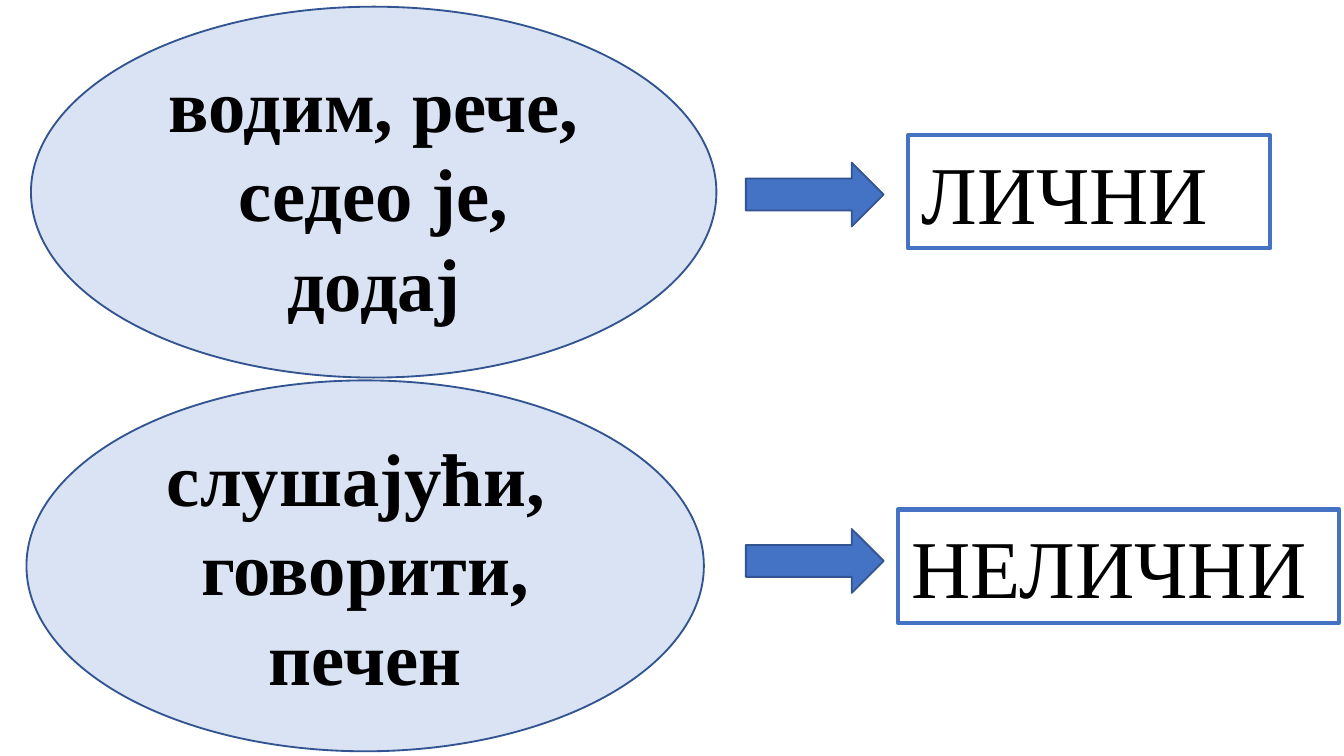
import dataclasses

import pptx
import pptx.dml.color
import pptx.enum.shapes
import pptx.enum.text
import pptx.util

Pt = pptx.util.Pt
Shape = pptx.enum.shapes.MSO_SHAPE
Align = pptx.enum.text.PP_ALIGN
Anchor = pptx.enum.text.MSO_ANCHOR


@dataclasses.dataclass
class Theme:
    font: str = "Times New Roman"
    text: str = "000000"
    pale: str = "DAE3F3"
    accent: str = "4472C4"
    outline: str = "325491"
    verb_size: int = 40
    label_size: int = 44
    thin: float = 1
    thick: float = 2.25


class VerbSlide:
    def __init__(self, slide, theme):
        self.slide = slide
        self.theme = theme

    def color(self, value):
        return pptx.dml.color.RGBColor.from_string(value)

    def shape(self, kind, bounds, fill, line, weight):
        shape = self.slide.shapes.add_shape(kind, *map(Pt, bounds))
        shape.shadow.inherit = False
        if fill:
            shape.fill.solid()
            shape.fill.fore_color.rgb = self.color(fill)
        else:
            shape.fill.background()
        shape.line.color.rgb = self.color(line)
        shape.line.width = Pt(weight)
        return shape

    def set_text(self, shape, lines, size, bold, align, anchor):
        frame = shape.text_frame
        frame.word_wrap = True
        frame.vertical_anchor = anchor
        frame.text = "\n".join(lines)
        for paragraph in frame.paragraphs:
            paragraph.alignment = align
            paragraph.font.name = self.theme.font
            paragraph.font.size = Pt(size)
            paragraph.font.bold = bold
            paragraph.font.color.rgb = self.color(self.theme.text)

    def verbs(self, bounds, lines):
        theme = self.theme
        ellipse = self.shape(Shape.OVAL, bounds, theme.pale, theme.outline, theme.thin)
        self.set_text(ellipse, lines, theme.verb_size, True, Align.CENTER, Anchor.MIDDLE)

    def arrow(self, bounds):
        theme = self.theme
        self.shape(Shape.RIGHT_ARROW, bounds, theme.accent, theme.outline, theme.thin)

    def label(self, bounds, text):
        theme = self.theme
        box = self.shape(Shape.RECTANGLE, bounds, None, theme.accent, theme.thick)
        self.set_text(box, [text], theme.label_size, False, Align.LEFT, Anchor.TOP)
        box.text_frame.auto_size = pptx.enum.text.MSO_AUTO_SIZE.SHAPE_TO_FIT_TEXT


def main():
    deck = pptx.Presentation()
    deck.slide_width, deck.slide_height = Pt(720), Pt(405)
    page = VerbSlide(deck.slides.add_slide(deck.slide_layouts[6]), Theme())

    page.verbs((16.6, 3.6, 367.2, 198.7), ["водим, рече,", "седео је, додај"])
    page.verbs((14.2, 203.8, 362.9, 198.7), ["слушајући, ", "говорити,", "печен"])
    for top in (87.1, 283.4):
        page.arrow((399.6, top, 73.8, 34.2))
    page.label((486.5, 72.5, 194, 60.6), "ЛИЧНИ")
    page.label((481, 273, 236.5, 60.6), "НЕЛИЧНИ")

    deck.save("out.pptx")


if __name__ == "__main__":
    main()
